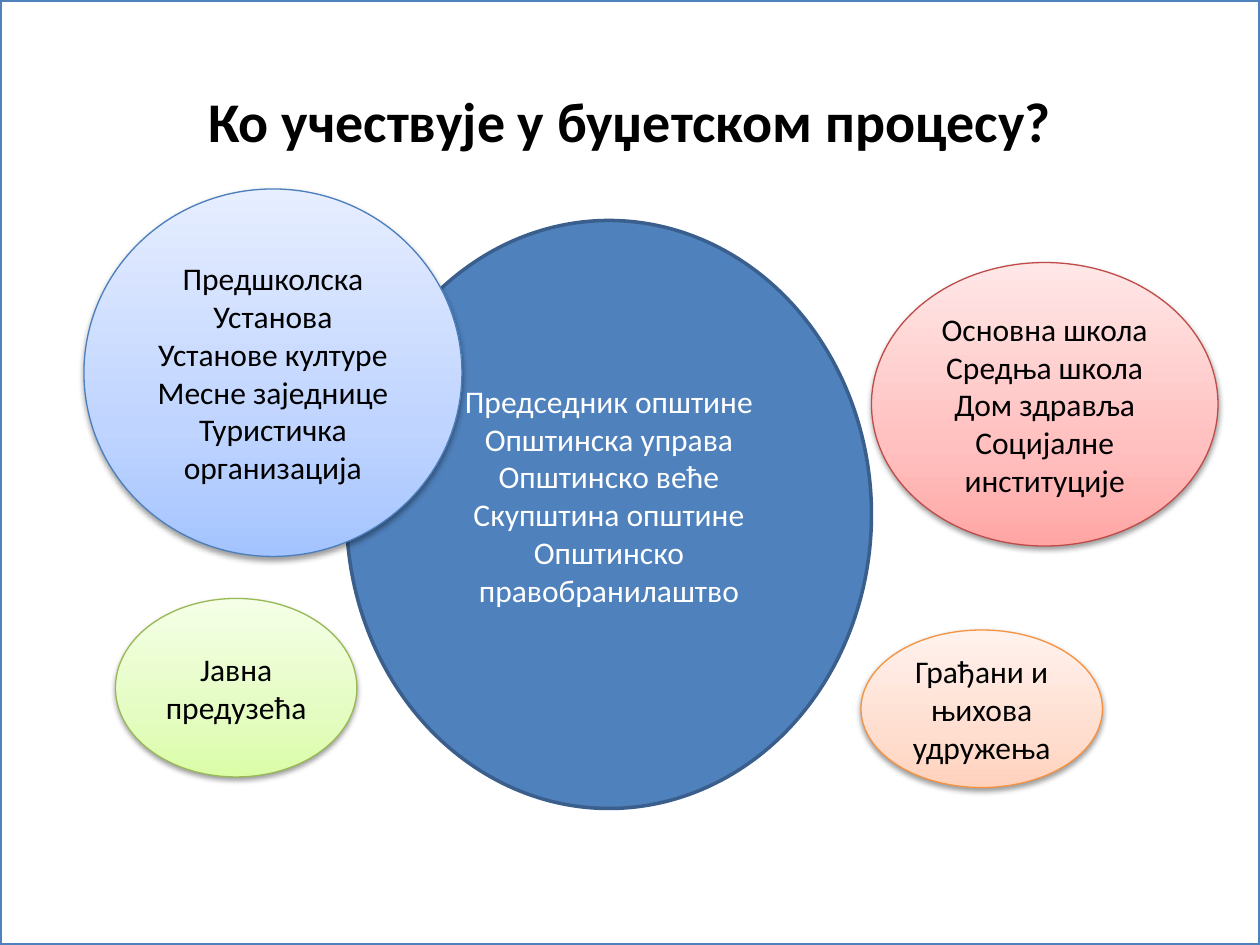
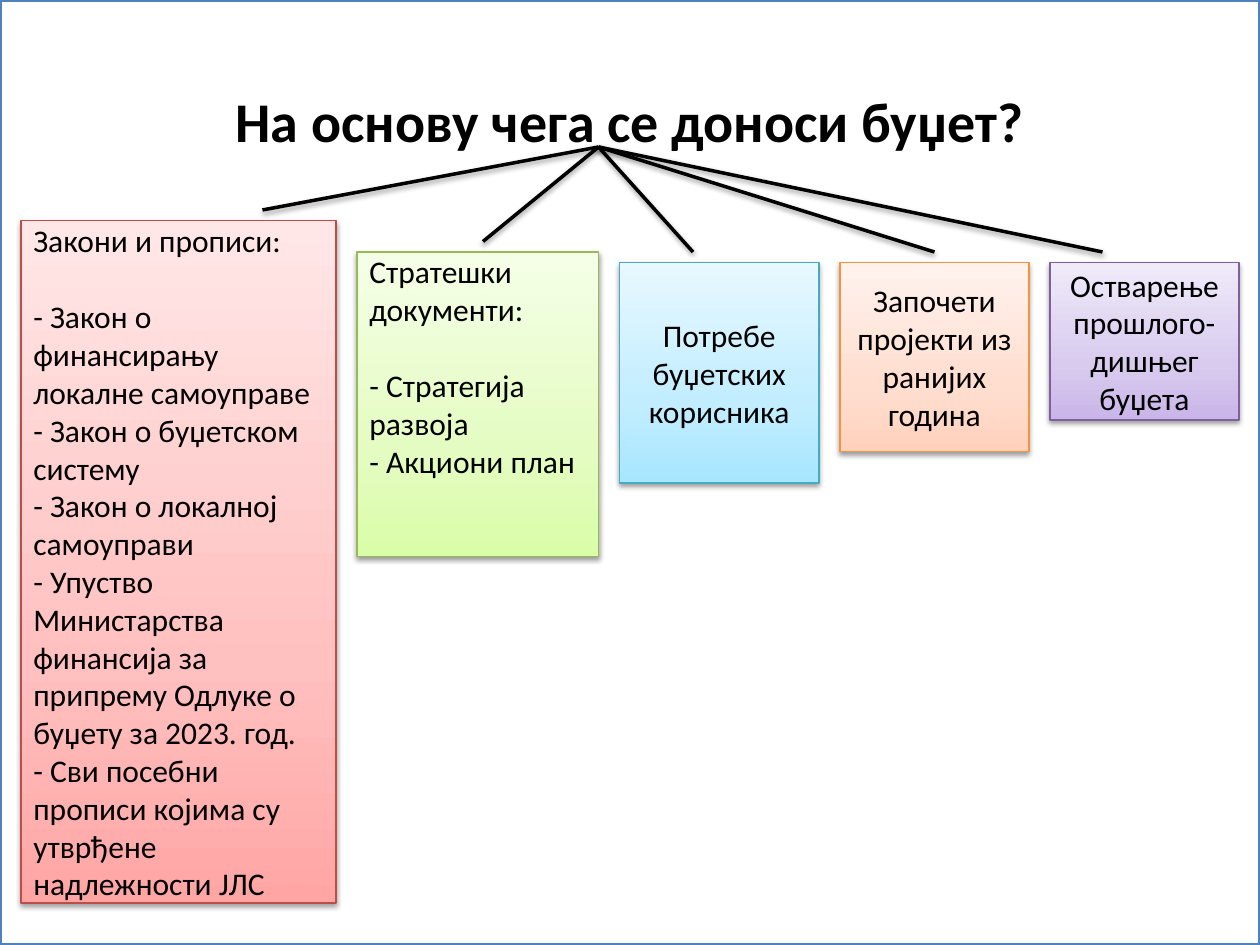
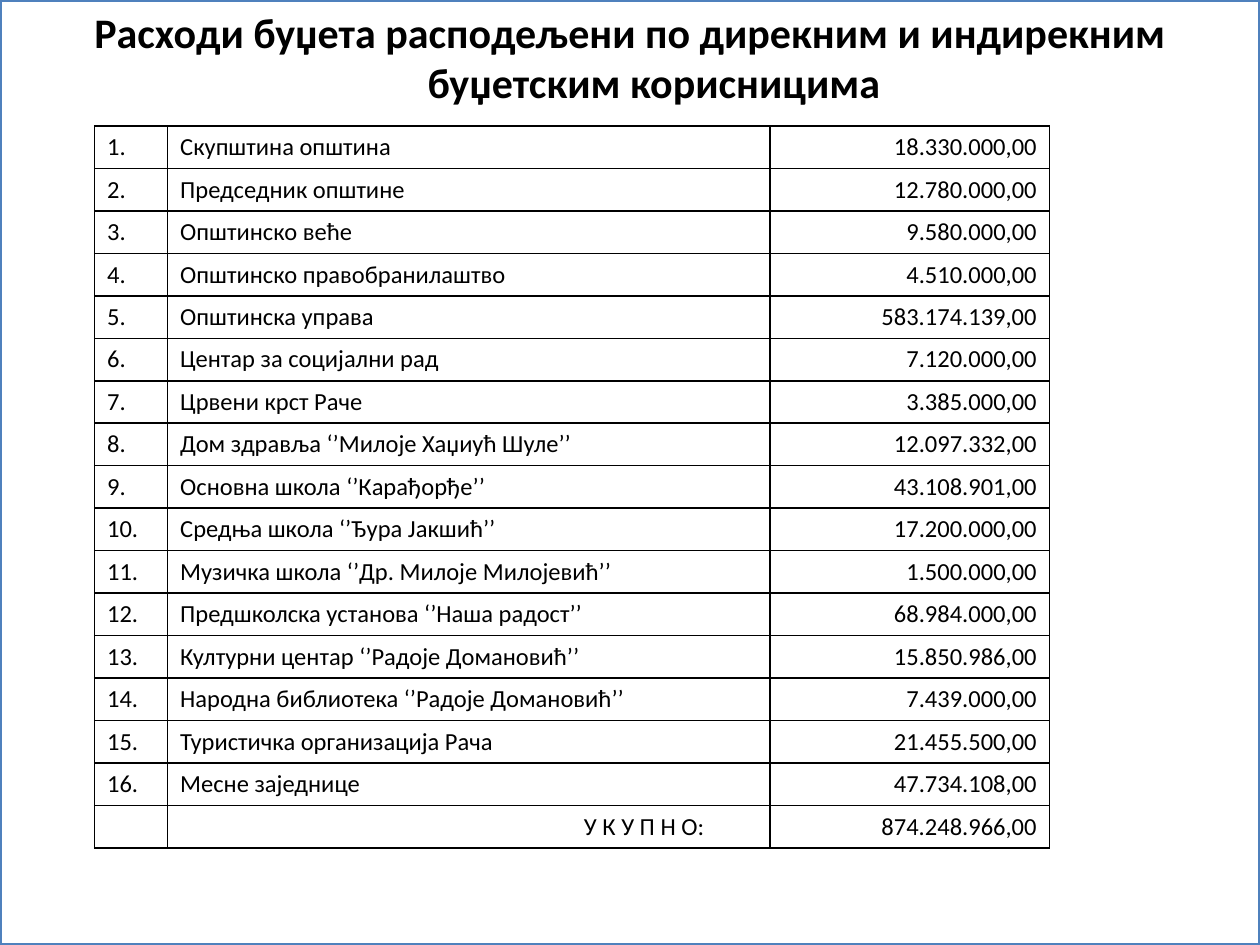
from copy import deepcopy

from lxml.etree import SubElement
from pptx import Presentation
from pptx.dml.color import RGBColor
from pptx.enum.shapes import MSO_CONNECTOR, MSO_SHAPE
from pptx.enum.text import MSO_ANCHOR, PP_ALIGN
from pptx.oxml.ns import qn
from pptx.util import Inches, Pt

# Content: positions are left, top, width, height in twelfths of an inch
PARTICIPANTS_TITLE = "Ко учествује у буџетском процесу?"
CORE = ((33, 21, 50, 56), [
    "Председник општине", "Општинска управа", "Општинско веће",
    "Скупштина општине", "Општинско правобранилаштво"])
PARTICIPANTS = [
    ("blue", (8, 18, 36, 35), ["Предшколска", "Установа", "Установе културе",
                               "Месне заједнице", "Туристичка организација"]),
    ("green", (11, 57, 23, 17), ["Јавна предузећа"]),
    ("red", (83, 25, 33, 27), ["Основна школа", "Средња школа", "Дом здравља",
                               "Социјалне институције"]),
    ("orange", (82, 60, 23, 15), ["Грађани и њихова удружења"]),
]

BASIS_TITLE = "На основу чега се доноси буџет?"
LISTS = [  # colour, place, heading and items, free lines at the bottom
    ("red", (2, 21, 30, 65), [
        "Закони и прописи:",
        "- Закон о финансирању локалне самоуправе",
        "- Закон о буџетском систему",
        "- Закон о локалној самоуправи",
        "- Упуство Министарства финансија за припрему Одлуке о буџету за 2023. год.",
        "- Сви посебни прописи којима су утврђене надлежности ЈЛС"], 0),
    ("green", (34, 24, 23, 29), [
        "Стратешки документи:", "- Стратегија развоја", "- Акциони план"], 2),
]
NEEDS = [
    ("aqua", (59, 25, 19, 21), ["Потребе буџетских корисника"]),
    ("orange", (80, 25, 18, 18), ["Започети пројекти из ранијих година"]),
    ("purple", (100, 25, 18, 15), ["Остварење прошлого-дишњег буџета"]),
]
BRANCH_START = (57, 14)
BRANCH_ENDS = [(25, 20), (46, 23), (66, 24), (89, 24), (105, 24)]

EXPENSES_TITLE = ("Расходи буџета расподељени по дирекним и индирекним "
                  "буџетским корисницима")
EXPENSES = [
    ("Скупштина општина", "18.330.000,00"),
    ("Председник општине", "12.780.000,00"),
    ("Општинско веће", "9.580.000,00"),
    ("Општинско правобранилаштво", "4.510.000,00"),
    ("Општинска управа", "583.174.139,00"),
    ("Центар за социјални рад", "7.120.000,00"),
    ("Црвени крст Раче", "3.385.000,00"),
    ("Дом здравља ‘’Милоје Хаџиућ Шуле’’", "12.097.332,00"),
    ("Основна школа ‘’Карађорђе’’", "43.108.901,00"),
    ("Средња школа ‘’Ђура Јакшић’’", "17.200.000,00"),
    ("Музичка школа ‘’Др. Милоје Милојевић’’", "1.500.000,00"),
    ("Предшколска установа ‘’Наша радост’’", "68.984.000,00"),
    ("Културни центар ‘’Радоје Домановић’’", "15.850.986,00"),
    ("Народна библиотека ‘’Радоје Домановић’’", "7.439.000,00"),
    ("Туристичка организација Рача", "21.455.500,00"),
    ("Месне заједнице", "47.734.108,00"),
]
TOTAL = ("У К У П Н О:", "874.248.966,00")
COLUMN_WIDTHS = (0.58, 4.78, 2.22)

# Shared style
FONT = "Calibri"
BLACK = RGBColor(0x00, 0x00, 0x00)
WHITE = RGBColor(0xFF, 0xFF, 0xFF)
BLUE = RGBColor(0x4F, 0x81, 0xBD)
DARK_BLUE = RGBColor(0x3A, 0x5F, 0x8C)
STOPS = (0, 0.35, 1)
PALETTE = {  # outline, then gradient from bottom to top
    name: [RGBColor.from_string(code) for code in codes.split()]
    for name, codes in {
        "blue": "4B7EBC A4C4FF BFD4FF E6EEFF",
        "green": "98B955 DAFDA7 E4FCC2 F5FFE7",
        "red": "BF4C48 FFA6A5 FFC0BF FFE7E7",
        "orange": "F69240 FFD2BD FFDED0 FFF2ED",
        "aqua": "46AAC5 A7E6FF C1EDFF E7F8FF",
        "purple": "7D60A0 C9B5E8 D8CBEE F0EAF9",
    }.items()
}
LINE_HEIGHT = Pt(22)  # one line of 18 pt text


def twelfths(values):
    return [Inches(value / 12) for value in values]


def style(paragraph, size, color=BLACK, align=PP_ALIGN.CENTER, bold=False):
    paragraph.alignment = align
    font = paragraph.font
    font.name, font.size, font.bold = FONT, Pt(size), bold
    font.color.rgb = color


def outline(part, color, width):
    part.line.color.rgb = color
    part.line.width = Pt(width)


def cast_shadow(part):
    effects = SubElement(part._element.spPr, qn("a:effectLst"))
    shadow = SubElement(effects, qn("a:outerShdw"), blurRad=str(Pt(3.1)),
                        dist=str(Pt(1.6)), dir="5400000", rotWithShape="0")
    color = SubElement(shadow, qn("a:srgbClr"), val=str(BLACK))
    SubElement(color, qn("a:alpha"), val="38000")


def add_titled_slide(deck, title, size=32, top=0.69):
    """Add a blank slide with the framed page that carries the title."""
    slide = deck.slides.add_slide(deck.slide_layouts[6])
    page = slide.shapes.add_shape(MSO_SHAPE.RECTANGLE, 0, 0,
                                  deck.slide_width, deck.slide_height)
    page.shadow.inherit = False
    page.fill.solid()
    page.fill.fore_color.rgb = WHITE
    outline(page, BLUE, 2)
    frame = page.text_frame
    frame.vertical_anchor = MSO_ANCHOR.TOP
    frame.margin_top = Inches(top)
    frame.text = title
    paragraph = frame.paragraphs[0]
    style(paragraph, size, bold=True)
    hanging = paragraph._p.get_or_add_pPr()
    hanging.set("marL", str(Inches(0.38)))
    hanging.set("indent", str(Inches(-0.38)))
    return slide


def add_bubble(slide, kind, place, lines, color=BLACK, align=PP_ALIGN.CENTER,
               free_lines=0):
    bubble = slide.shapes.add_shape(kind, *twelfths(place))
    frame = bubble.text_frame
    frame.margin_bottom = Inches(0.05) + free_lines * LINE_HEIGHT
    frame.text = "\n".join(lines)
    for paragraph in frame.paragraphs:
        style(paragraph, 18, color, align)
    return bubble


def add_gradient_bubble(slide, kind, hue, place, lines, **text_options):
    bubble = add_bubble(slide, kind, place, lines, **text_options)
    border, *shades = PALETTE[hue]
    fill = bubble.fill
    fill.gradient()
    fill.gradient_angle = 90
    stop_list = bubble._element.spPr.find(qn("a:gradFill")).find(qn("a:gsLst"))
    stop_list.insert(1, deepcopy(stop_list[0]))
    for stop, position, shade in zip(fill.gradient_stops, STOPS, shades):
        stop.position = position
        stop.color.rgb = shade
    outline(bubble, border, 0.75)
    cast_shadow(bubble)
    return bubble


def build_participants(deck):
    slide = add_titled_slide(deck, PARTICIPANTS_TITLE)
    core = add_bubble(slide, MSO_SHAPE.OVAL, *CORE, color=WHITE, free_lines=1)
    core.shadow.inherit = False
    core.fill.solid()
    core.fill.fore_color.rgb = BLUE
    outline(core, DARK_BLUE, 2)
    for participant in PARTICIPANTS:
        add_gradient_bubble(slide, MSO_SHAPE.OVAL, *participant)


def build_basis(deck):
    slide = add_titled_slide(deck, BASIS_TITLE)
    for hue, place, lines, free_lines in LISTS:
        box = add_gradient_bubble(slide, MSO_SHAPE.RECTANGLE, hue, place, lines,
                                  align=PP_ALIGN.LEFT, free_lines=free_lines)
        box.text_frame.paragraphs[0].space_after = LINE_HEIGHT
    for need in NEEDS:
        add_gradient_bubble(slide, MSO_SHAPE.RECTANGLE, *need)
    for end in BRANCH_ENDS:
        branch = slide.shapes.add_connector(MSO_CONNECTOR.STRAIGHT,
                                            *twelfths(BRANCH_START + end))
        outline(branch, BLACK, 2)
        cast_shadow(branch)


def add_borders(cell):
    properties = cell._tc.get_or_add_tcPr()
    for side in ("lnL", "lnR", "lnT", "lnB"):
        border = SubElement(properties, qn(f"a:{side}"), w=str(Pt(1)))
        fill = SubElement(border, qn("a:solidFill"))
        SubElement(fill, qn("a:srgbClr"), val=str(BLACK))


def build_expenses(deck):
    slide = add_titled_slide(deck, EXPENSES_TITLE, size=24, top=0.05)
    rows = [(f"{number}.", *expense) for number, expense in enumerate(EXPENSES, 1)]
    rows.append(("", *TOTAL))
    table = slide.shapes.add_table(
        len(rows), len(COLUMN_WIDTHS), Inches(0.75), Inches(1),
        Inches(sum(COLUMN_WIDTHS)), Inches(len(rows) / 3)).table
    table.first_row = table.horz_banding = False
    for column, width in zip(table.columns, COLUMN_WIDTHS):
        column.width = Inches(width)
    aligns = (PP_ALIGN.LEFT, PP_ALIGN.LEFT, PP_ALIGN.RIGHT)
    for r, row in enumerate(rows):
        for c, (text, align) in enumerate(zip(row, aligns)):
            cell = table.cell(r, c)
            cell.text = text
            style(cell.text_frame.paragraphs[0], 14, align=align)
            add_borders(cell)
            cell.fill.background()
    total_label = table.cell(len(rows) - 1, 1)
    total_label.text_frame.paragraphs[0].alignment = PP_ALIGN.RIGHT
    total_label.margin_right = Inches(0.52)


def main():
    deck = Presentation()
    deck.slide_width, deck.slide_height = Inches(10), Inches(7.5)
    build_participants(deck)
    build_basis(deck)
    build_expenses(deck)
    deck.save("out.pptx")


if __name__ == "__main__":
    main()
